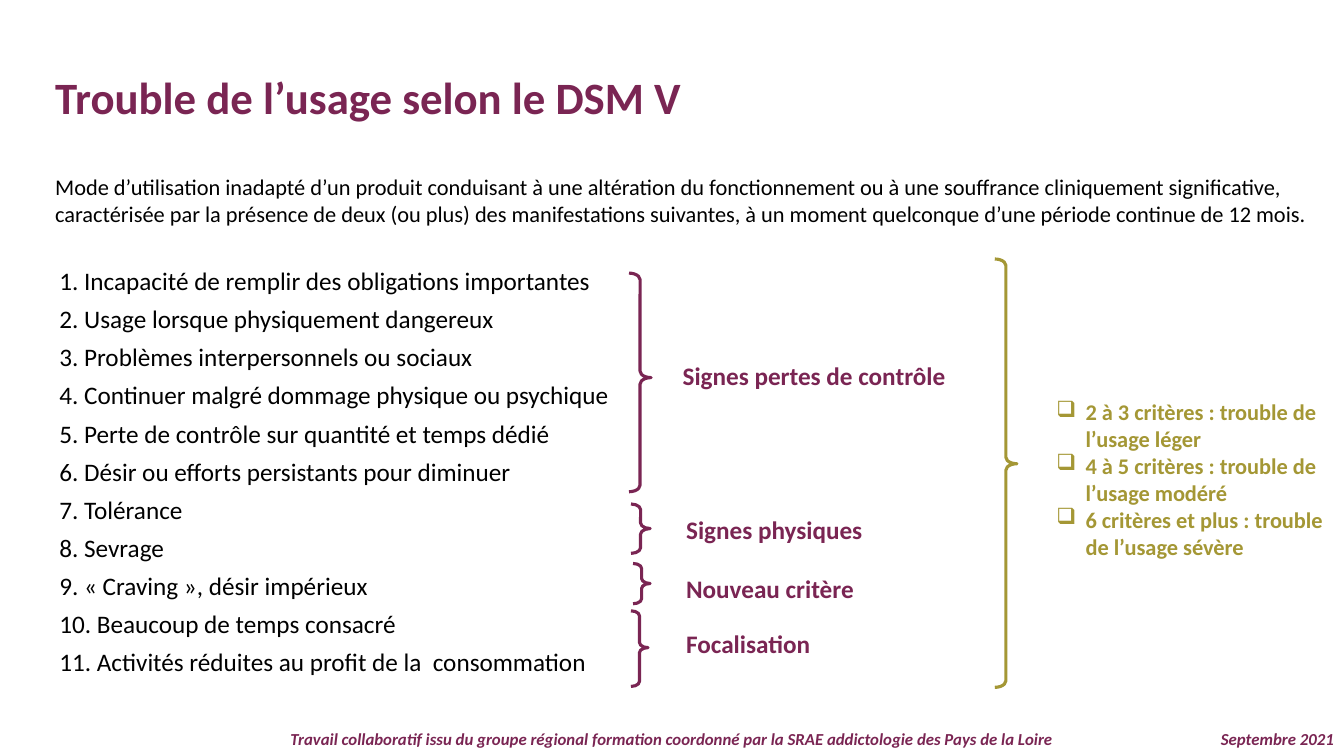
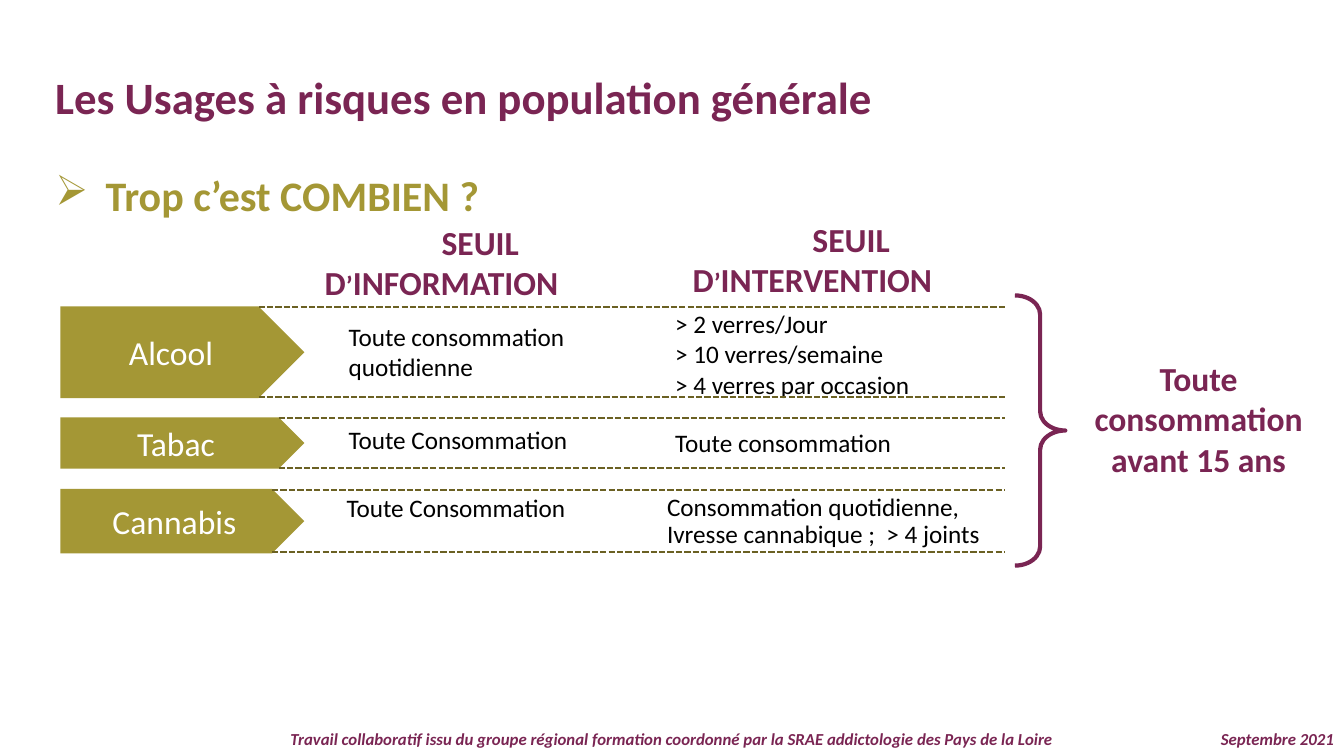
import dataclasses
import typing

import lxml.etree
import pptx
import pptx.dml.color
import pptx.enum.dml
import pptx.enum.shapes
import pptx.enum.text
import pptx.oxml.ns
import pptx.util

Pt = pptx.util.Pt
Align = pptx.enum.text.PP_ALIGN
Anchor = pptx.enum.text.MSO_ANCHOR
Preset = pptx.enum.shapes.MSO_SHAPE

# Shared look
FONT = "Calibri"
PLUM, OLIVE, DARK_OLIVE = "7A2553", "A49735", "6B6123"
BLACK, WHITE = "000000", "FFFFFF"
SLIDE_WIDTH, SLIDE_HEIGHT = 960, 540
CREDIT = ("Travail collaboratif issu du groupe régional formation coordonné "
          "par la SRAE addictologie des Pays de la Loire")
DATE = "Septembre 2021"


@dataclasses.dataclass(frozen=True)
class Box:
    left: float
    top: float
    width: float
    height: float

    def lengths(self) -> tuple:
        return Pt(self.left), Pt(self.top), Pt(self.width), Pt(self.height)


@dataclasses.dataclass(frozen=True)
class Style:
    size: float = 18
    color: str = BLACK
    bold: bool = False
    italic: bool = False
    small_caps: bool = False
    align: typing.Any = Align.LEFT
    line_spacing: float = 1.0
    space_after: float = 0
    bullet: str = ""
    indent: float = 0


@dataclasses.dataclass(frozen=True)
class Brace:
    box: Box
    color: str = PLUM
    weight: float = 2.25
    curve: float = 0.295
    tip: float = 0.497


@dataclasses.dataclass(frozen=True)
class Sign:
    label: str
    label_box: Box
    brace: Brace


@dataclasses.dataclass(frozen=True)
class Product:
    name: str
    top: float
    height: float
    information: str
    information_box: Box
    intervention: str
    intervention_box: Box
    information_spacing: float = 0.9
    intervention_spacing: float = 1.0


TITLE = Style(32, PLUM, bold=True)
FOOTER = Style(12, PLUM, bold=True, italic=True, align=Align.CENTER, line_spacing=0.9)
SIGN_LABEL = Style(18, PLUM, bold=True)
HEADING = Style(24, PLUM, bold=True, small_caps=True, align=Align.CENTER)


# Drawing helpers
def rgb(color: str) -> pptx.dml.color.RGBColor:
    return pptx.dml.color.RGBColor.from_string(color)


def add_bullet(paragraph, style: Style) -> None:
    properties = paragraph._p.get_or_add_pPr()
    properties.set("marL", str(Pt(style.indent)))
    properties.set("indent", str(-Pt(style.indent)))
    bullet = lxml.etree.SubElement(properties, pptx.oxml.ns.qn("a:buChar"))
    bullet.set("char", style.bullet)


def add_run(paragraph, text: str, style: Style) -> None:
    run = paragraph.add_run()
    run.text = text
    run.font.name = FONT
    run.font.size = Pt(style.size)
    run.font.bold = style.bold
    run.font.italic = style.italic
    run.font.color.rgb = rgb(style.color)
    if style.small_caps:
        run._r.get_or_add_rPr().set("cap", "small")


def write(text_frame, texts: typing.Sequence[str], style: Style) -> None:
    text_frame.word_wrap = True
    for index, text in enumerate(texts):
        paragraph = text_frame.add_paragraph() if index else text_frame.paragraphs[0]
        if style.bullet:
            add_bullet(paragraph, style)
        paragraph.alignment = style.align
        paragraph.line_spacing = style.line_spacing
        paragraph.space_after = Pt(style.space_after)
        for number, line in enumerate(text.split("\n")):
            if number:
                paragraph.add_line_break()
            add_run(paragraph, line, style)


def add_text(slide, box: Box, style: Style, *texts: str) -> None:
    shape = slide.shapes.add_textbox(*box.lengths())
    write(shape.text_frame, texts, style)


def add_brace(slide, brace: Brace) -> None:
    shape = slide.shapes.add_shape(Preset.RIGHT_BRACE, *brace.box.lengths())
    shape.shadow.inherit = False
    shape.adjustments[0] = brace.curve
    shape.adjustments[1] = brace.tip
    shape.fill.background()
    shape.line.color.rgb = rgb(brace.color)
    shape.line.width = Pt(brace.weight)


def add_plate(slide, box: Box, name: str) -> None:
    shape = slide.shapes.add_shape(Preset.PENTAGON, *box.lengths())
    shape.shadow.inherit = False
    shape.fill.solid()
    shape.fill.fore_color.rgb = rgb(OLIVE)
    shape.line.fill.background()
    shape.text_frame.vertical_anchor = Anchor.MIDDLE
    write(shape.text_frame, [name], Style(24, WHITE, align=Align.CENTER))


def add_dashed_line(slide, left: float, right: float, top: float) -> None:
    line = slide.shapes.add_connector(
        pptx.enum.shapes.MSO_CONNECTOR.STRAIGHT, Pt(left), Pt(top), Pt(right), Pt(top))
    line.line.color.rgb = rgb(DARK_OLIVE)
    line.line.width = Pt(1.5)
    line.line.dash_style = pptx.enum.dml.MSO_LINE.SQUARE_DOT
    lxml.etree.SubElement(line._element.spPr, pptx.oxml.ns.qn("a:effectLst"))


def add_slide(presentation, title: str):
    slide = presentation.slides.add_slide(presentation.slide_layouts[6])
    add_text(slide, Box(0, 518.4, SLIDE_WIDTH, 21.6), FOOTER, CREDIT)
    date_style = dataclasses.replace(FOOTER, align=Align.RIGHT)
    add_text(slide, Box(809.5, 518.4, 150.5, 21.6), date_style, DATE)
    add_text(slide, Box(32.4, 46, 927.6, 46), TITLE, title)
    return slide


# Slide 1: criteria and signs
DEFINITION = (
    "Mode d’utilisation inadapté d’un produit conduisant à une altération du "
    "fonctionnement ou à une souffrance cliniquement significative, caractérisée "
    "par la présence de deux (ou plus) des manifestations suivantes, à un moment "
    "quelconque d’une période continue de 12 mois.")
CRITERIA = (
    "Incapacité de remplir des obligations importantes",
    "Usage lorsque physiquement dangereux",
    "Problèmes interpersonnels ou sociaux",
    "Continuer malgré dommage physique ou psychique",
    "Perte de contrôle sur quantité et temps dédié",
    "Désir ou efforts persistants pour diminuer",
    "Tolérance",
    "Sevrage",
    "« Craving », désir impérieux",
    "Beaucoup de temps consacré",
    "Activités réduites au profit de la  consommation",
)
SIGNS = (
    Sign("Signes pertes de contrôle", Box(480.5, 253.5, 212, 29),
         Brace(Box(449.3, 195.1, 15.8, 156.2), tip=0.478)),
    Sign("Signes physiques", Box(483, 363.6, 212, 29),
         Brace(Box(450.7, 360, 13.7, 35.3))),
    Sign("Nouveau critère", Box(483, 406, 212, 29),
         Brace(Box(452.2, 402.5, 12.2, 28.8))),
    Sign("Focalisation", Box(483, 445, 212, 29),
         Brace(Box(450.7, 436.3, 12.2, 54), tip=0.487)),
)
SEVERITIES = (
    "2 à 3 critères : trouble de l’usage léger",
    "4 à 5 critères : trouble de l’usage modéré",
    "6 critères et plus : trouble de l’usage sévère",
)


def build_criteria_slide(presentation) -> None:
    slide = add_slide(presentation, "Trouble de l’usage selon le DSM V")
    add_text(slide, Box(32.4, 120.2, 928, 46), Style(16), DEFINITION)
    numbered = [f"{number}. {text}" for number, text in enumerate(CRITERIA, 1)]
    add_text(slide, Box(35.3, 186, 420, 323), Style(18, space_after=5.65), *numbered)
    for sign in SIGNS:
        add_text(slide, sign.label_box, SIGN_LABEL, sign.label)
        add_brace(slide, sign.brace)
    add_brace(slide, Brace(Box(710.6, 185, 15.8, 306), OLIVE, tip=0.478))
    severity = Style(16, OLIVE, bold=True, bullet="❑", indent=20.9)
    add_text(slide, Box(747.4, 281, 210.2, 124), severity, *SEVERITIES)


# Slide 2: thresholds for each product
PLATE_LEFT, PLATE_WIDTH = 43.2, 174.2
LINE_RIGHT, LINE_INSET = 718, 0.7
PRODUCTS = (
    Product("Alcool", 218.9, 65.5,
            "Toute consommation quotidienne", Box(241.9, 226.1, 181.4, 54),
            "> 2 verres/Jour\n> 10 verres/semaine\n> 4 verres par occasion",
            Box(475.2, 216.7, 240, 68.4), information_spacing=1.0),
    Product("Tabac", 298.1, 36.7,
            "Toute Consommation", Box(241.9, 301.7, 200, 34.6),
            "Toute consommation", Box(475.2, 301.7, 240, 28.8)),
    Product("Cannabis", 349.2, 46.1,
            "Toute Consommation", Box(240.5, 350.6, 200, 34.6),
            "Consommation quotidienne,\nIvresse cannabique ;  > 4 joints",
            Box(469.4, 349.9, 292, 43.2), intervention_spacing=0.9),
)


def add_product(slide, product: Product) -> None:
    add_plate(slide, Box(PLATE_LEFT, product.top, PLATE_WIDTH, product.height), product.name)
    add_text(slide, product.information_box,
             Style(line_spacing=product.information_spacing), product.information)
    add_text(slide, product.intervention_box,
             Style(line_spacing=product.intervention_spacing), product.intervention)
    line_left = PLATE_LEFT + PLATE_WIDTH - product.height / 2
    bottom = product.top + product.height
    for top in (product.top + LINE_INSET, bottom - LINE_INSET):
        add_dashed_line(slide, line_left, LINE_RIGHT, top)


def build_threshold_slide(presentation) -> None:
    slide = add_slide(presentation, "Les Usages à risques en population générale")
    question = Style(30, OLIVE, bold=True, line_spacing=0.9, bullet="➢", indent=36)
    add_text(slide, Box(32.4, 121.7, 840, 47.5), question, "Trop c’est COMBIEN ?")
    add_text(slide, Box(185.8, 154.8, 259.2, 65.5), HEADING, "SEUIL\nD’INFORMATION")
    add_text(slide, Box(455, 152.6, 250.6, 65.5), HEADING, "SEUIL\nD’INTERVENTION")
    for product in PRODUCTS:
        add_product(slide, product)
    add_brace(slide, Brace(Box(725, 211, 36, 193), weight=3, curve=0.379, tip=0.5))
    add_text(slide, Box(755, 252, 202.3, 101.5),
             Style(24, PLUM, bold=True, align=Align.CENTER),
             "Toute", "consommation", "avant 15 ans")


def main() -> None:
    presentation = pptx.Presentation()
    presentation.slide_width = Pt(SLIDE_WIDTH)
    presentation.slide_height = Pt(SLIDE_HEIGHT)
    build_criteria_slide(presentation)
    build_threshold_slide(presentation)
    presentation.save("out.pptx")


if __name__ == "__main__":
    main()
